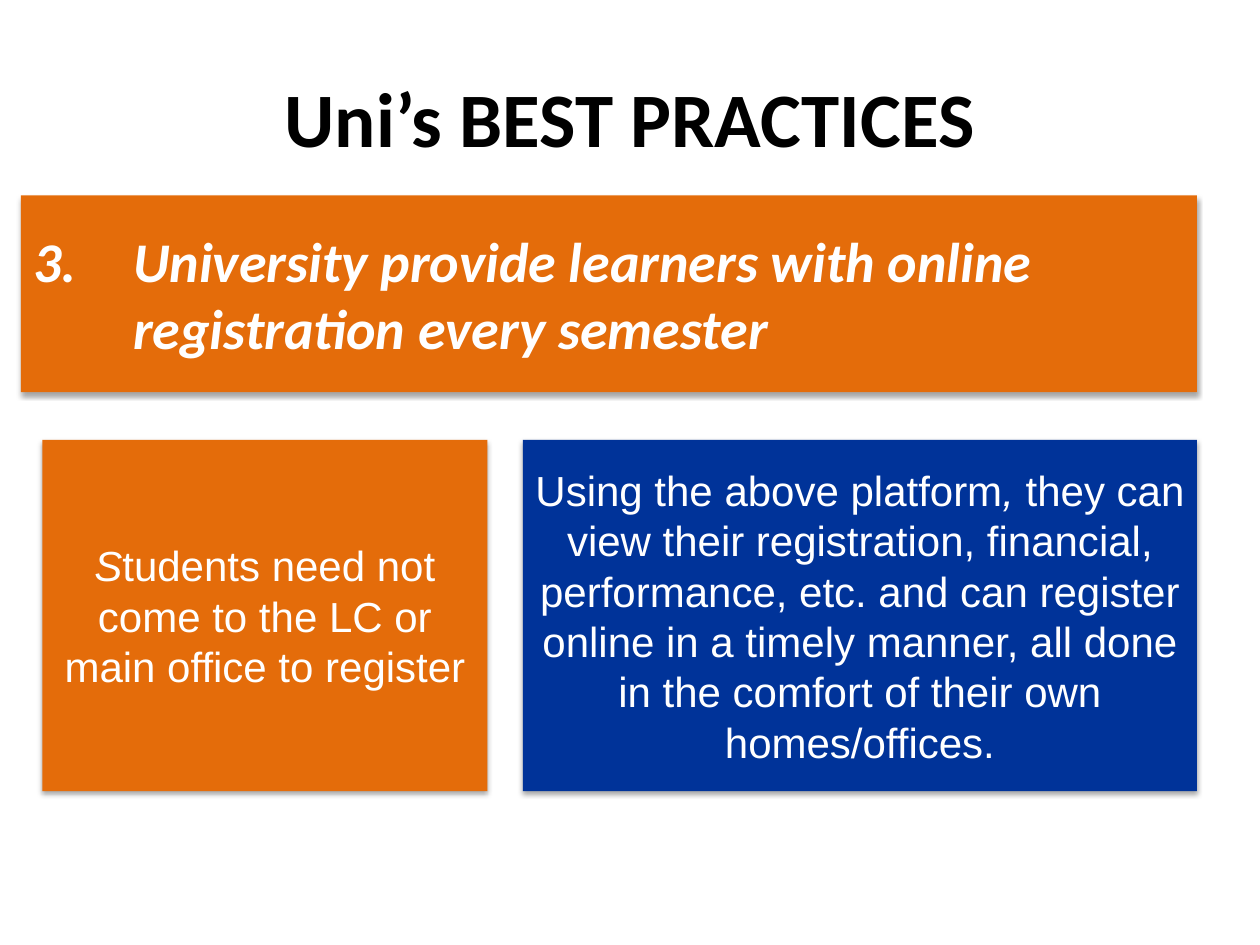
from lxml.etree import SubElement
from pptx import Presentation
from pptx.dml.color import RGBColor
from pptx.enum.shapes import MSO_SHAPE
from pptx.enum.text import MSO_ANCHOR, PP_ALIGN
from pptx.oxml.ns import qn
from pptx.util import Pt

COLORS = {"title": "000000", "text": "FFFFFF", "orange": "E46C0A",
          "blue": "003399", "shadow": "000000"}


def write_text(frame, runs, font, size, color, align):
    frame.word_wrap = True
    frame.vertical_anchor = MSO_ANCHOR.MIDDLE
    paragraph = frame.paragraphs[0]
    paragraph.alignment = align
    for words, bold, italic in runs:
        run = paragraph.add_run()
        run.text = words
        run.font.name = font
        run.font.size = Pt(size)
        run.font.bold = bold
        run.font.italic = italic
        run.font.color.rgb = RGBColor.from_string(COLORS[color])
    return paragraph


def add_panel(left, top, width, height, fill):
    panel = slide.shapes.add_shape(
        MSO_SHAPE.RECTANGLE, Pt(left), Pt(top), Pt(width), Pt(height))
    panel.fill.solid()
    panel.fill.fore_color.rgb = RGBColor.from_string(COLORS[fill])
    panel.line.fill.background()
    panel.shadow.inherit = False
    effects = panel._element.spPr.find(qn("a:effectLst"))
    shadow = SubElement(effects, qn("a:outerShdw"), blurRad=str(Pt(3.1)),
                        dist=str(Pt(1.8)), dir="5400000", rotWithShape="0")
    shade = SubElement(shadow, qn("a:srgbClr"), val=COLORS["shadow"])
    SubElement(shade, qn("a:alpha"), val="35000")
    return panel.text_frame


presentation = Presentation()
presentation.slide_width = Pt(720)
presentation.slide_height = Pt(540)
slide = presentation.slides.add_slide(presentation.slide_layouts[6])

title = slide.shapes.add_textbox(Pt(36), Pt(21.6), Pt(648), Pt(90))
write_text(title.text_frame, [("Uni’s BEST PRACTICES", True, False)],
           "Calibri", 44, "title", PP_ALIGN.CENTER)

practice = write_text(
    add_panel(12, 111.6, 672, 112.5, "orange"),
    [("3.\tUniversity provide learners with online registration every semester", True, True)],
    "Calibri", 32, "text", PP_ALIGN.LEFT)
hanging = practice._p.get_or_add_pPr()
hanging.set("marL", str(Pt(57)))
hanging.set("indent", str(Pt(-57)))

benefits = [
    (24.2, 254.3, "orange", [
        ("S", False, True),
        ("tudents need not come to the LC or main office to register", False, False)]),
    (298.8, 385.2, "blue", [
        ("Using the above platform", False, False),
        (", ", False, True),
        ("they can view their registration, financial, performance, etc. and can register "
         "online in a timely manner, all done in the comfort of their own homes/offices.",
         False, False)]),
]
for left, width, fill, runs in benefits:
    write_text(add_panel(left, 251.4, width, 200.7, fill), runs,
               "Arial", 24, "text", PP_ALIGN.CENTER)

presentation.save("out.pptx")
